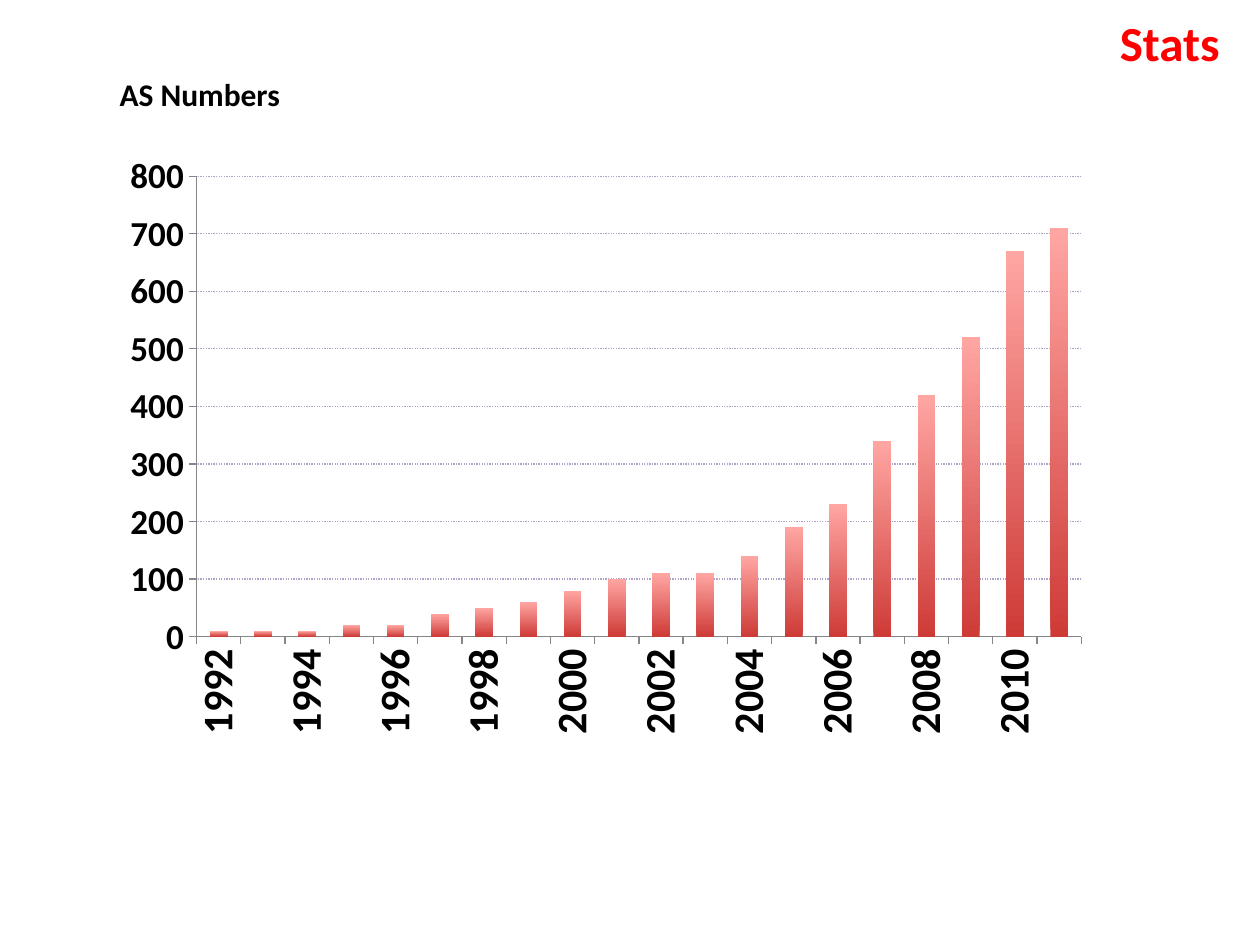
from lxml import etree
from pptx import Presentation
from pptx.chart.data import CategoryChartData
from pptx.dml.color import RGBColor
from pptx.enum.chart import XL_CHART_TYPE, XL_TICK_MARK
from pptx.enum.dml import MSO_LINE
from pptx.enum.text import MSO_ANCHOR, PP_ALIGN
from pptx.oxml import parse_xml
from pptx.oxml.ns import nsdecls, qn
from pptx.util import Inches, Pt

COLUMNS = XL_CHART_TYPE.COLUMN_CLUSTERED
OUTSIDE = XL_TICK_MARK.OUTSIDE
DOTTED = MSO_LINE.ROUND_DOT
TOP = MSO_ANCHOR.TOP
LEFT, RIGHT = PP_ALIGN.LEFT, PP_ALIGN.RIGHT

FONT = "Calibri"
TITLE_ONLY = 5
FIRST_YEAR = 1992
AS_NUMBERS = [10, 10, 10, 20, 20, 40, 50, 60, 80, 100,
              110, 110, 140, 190, 230, 340, 420, 520, 670, 710]


def color(value):
    return RGBColor.from_string(value)


def style_font(font, size, value="000000"):
    font.name, font.size, font.bold = FONT, Pt(size), True
    font.color.rgb = color(value)


def write_heading(shape, box, text, size, value, align):
    """Put one bold line of text in the given box."""
    shape.left, shape.top, shape.width, shape.height = map(Inches, box)
    frame = shape.text_frame
    frame.word_wrap = True
    frame.vertical_anchor = TOP
    frame.text = text
    line = frame.paragraphs[0]
    line.alignment = align
    style_font(line.font, size, value)


def set_plot_layout(chart, **shares):
    """Fix the inner plot area as shares of the chart's size."""
    plot_area = chart.plots[0]._element.getparent()
    for old in plot_area.findall(qn("c:layout")):
        plot_area.remove(old)
    layout = parse_xml(f"<c:layout {nsdecls('c')}><c:manualLayout/></c:layout>")
    settings = {"layoutTarget": "inner", "xMode": "edge", "yMode": "edge", **shares}
    for tag, value in settings.items():
        etree.SubElement(layout[0], qn(f"c:{tag}")).set("val", str(value))
    plot_area.insert(0, layout)


def style_axis(axis, size):
    axis.major_tick_mark = OUTSIDE
    axis.format.line.color.rgb = color("868686")
    axis.format.line.width = Pt(0.75)
    style_font(axis.tick_labels.font, size)


def add_growth_chart(slide, box):
    """Draw the yearly count of AS numbers as columns."""
    data = CategoryChartData()
    data.categories = [str(FIRST_YEAR + i) for i in range(len(AS_NUMBERS))]
    data.add_series("Series 1", AS_NUMBERS)
    chart = slide.shapes.add_chart(COLUMNS, *map(Inches, box), data).chart
    chart.has_legend = chart.has_title = False
    chart.font.name, chart.font.size = FONT, Pt(10)
    set_plot_layout(chart, x=0.09, y=0.06, w=0.89, h=0.76)

    # Columns, dark at the foot and light at the top
    plot = chart.plots[0]
    plot.vary_by_categories = False
    plot.gap_width = 150
    fill = plot.series[0].format.fill
    fill.gradient()
    fill.gradient_angle = 90
    for stop, value in zip(fill.gradient_stops, ("CE3B37", "FFA6A3")):
        stop.color.rgb = color(value)

    # Years upright, every second one labelled
    years = chart.category_axis
    style_axis(years, 24)
    years._element.find(qn("c:txPr")).find(qn("a:bodyPr")).set("rot", "-5400000")
    skip = parse_xml(f'<c:tickLblSkip {nsdecls("c")} val="2"/>')
    years._element.find(qn("c:noMultiLvlLbl")).addprevious(skip)

    # Counts with dotted gridlines
    counts = chart.value_axis
    style_axis(counts, 20)
    counts.minimum_scale, counts.maximum_scale, counts.major_unit = 0, 800, 100
    grid = counts.major_gridlines.format.line
    grid.color.rgb = color("B3A2C7")
    grid.width, grid.dash_style = Pt(0.75), DOTTED


def main():
    deck = Presentation()
    deck.slide_width, deck.slide_height = Inches(10), Inches(7.5)
    slide = deck.slides.add_slide(deck.slide_layouts[TITLE_ONLY])
    left = 0.85

    add_growth_chart(slide, (left, 1.11, 7.89, 4.81))
    caption = slide.shapes.add_textbox(0, 0, 0, 0)
    write_heading(caption, (left, 0.55, 2.98, 0.4), "AS Numbers", 18, "000000", LEFT)
    write_heading(slide.shapes.title, (8.35, 0.05, 1.43, 0.57), "Stats", 28, "FF0000", RIGHT)

    deck.save("out.pptx")


if __name__ == "__main__":
    main()
